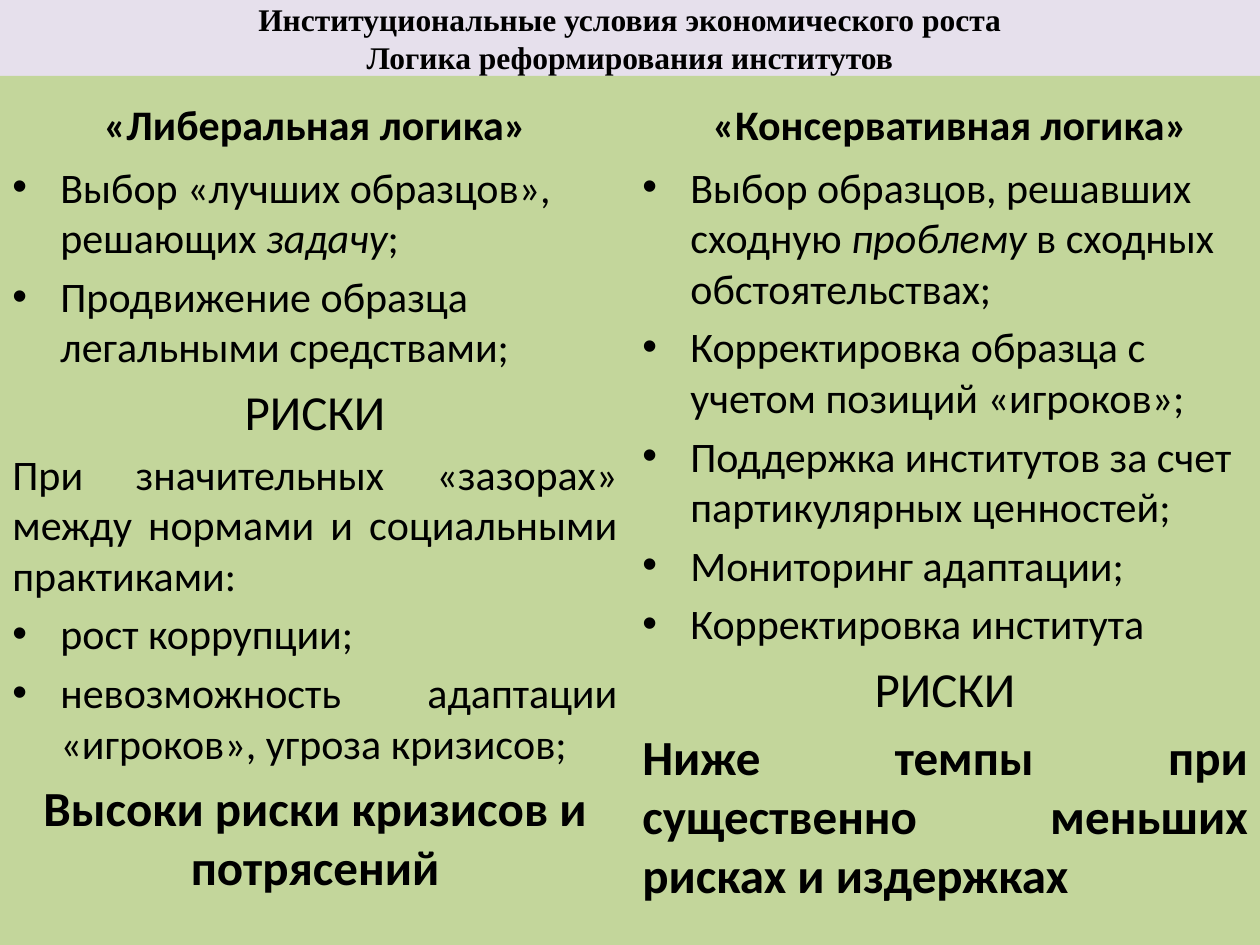
from lxml.etree import SubElement
from pptx import Presentation
from pptx.dml.color import RGBColor
from pptx.enum.shapes import MSO_SHAPE
from pptx.enum.text import MSO_ANCHOR, PP_ALIGN
from pptx.oxml.ns import qn
from pptx.util import Emu, Pt

SCALE = 914400 / 126
WIDTH, HEIGHT = 1260, 945
TITLE_BOTTOM, HEADING_BOTTOM = 76, 155
INDENT = 48
COLORS = {"title": "E6E0EC", "panel": "C3D69B", "text": "000000"}
LEFT, CENTER, JUSTIFY = PP_ALIGN.LEFT, PP_ALIGN.CENTER, PP_ALIGN.JUSTIFY

LIBERAL = [
    (LEFT, True, 24, [("Выбор «лучших образцов», решающих ", ""), ("задачу", "i"), (";", "")]),
    (LEFT, True, 24, [("Продвижение образца легальными средствами;", "")]),
    (CENTER, False, 28, [("РИСКИ", "")]),
    (JUSTIFY, False, 24, [("При значительных «зазорах» между нормами и социальными практиками:", "")]),
    (JUSTIFY, True, 24, [("рост коррупции;", "")]),
    (JUSTIFY, True, 24, [("невозможность адаптации «игроков», угроза кризисов;", "")]),
    (CENTER, False, 28, [("Высоки", "b"), (" ", ""), ("риски кризисов и потрясений", "b")]),
]
CONSERVATIVE = [
    (LEFT, True, 24, [("Выбор образцов, решавших сходную ", ""), ("проблему ", "i"),
                      ("в сходных обстоятельствах;", "")]),
    (LEFT, True, 24, [("Корректировка образца с учетом позиций «игроков»;", "")]),
    (LEFT, True, 24, [("Поддержка институтов за счет партикулярных ценностей;", "")]),
    (LEFT, True, 24, [("Мониторинг адаптации;", "")]),
    (LEFT, True, 24, [("Корректировка института", "")]),
    (CENTER, False, 28, [("РИСКИ", "")]),
    (JUSTIFY, False, 28, [("Ниже темпы при существенно меньших рисках и издержках", "b")]),
]


def px(length):
    """Turn pixels into EMU."""
    return Emu(round(length * SCALE))


def add_panel(slide, box, color, anchor):
    """Add a filled rectangle and return its text frame."""
    shape = slide.shapes.add_shape(MSO_SHAPE.RECTANGLE, *map(px, box))
    shape.shadow.inherit = False
    shape.fill.solid()
    shape.fill.fore_color.rgb = RGBColor.from_string(COLORS[color])
    shape.line.fill.background()
    frame = shape.text_frame
    frame.word_wrap = True
    frame.vertical_anchor = anchor
    return frame


def add_run(paragraph, text, size, style="", font="Calibri"):
    """Add one formatted run."""
    run = paragraph.add_run()
    run.text = text
    run.font.name = font
    run.font.size = Pt(size)
    run.font.bold = style == "b"
    run.font.italic = style == "i"
    run.font.color.rgb = RGBColor.from_string(COLORS["text"])


def set_bullet(paragraph):
    """Give a paragraph a hanging bullet."""
    properties = paragraph._p.get_or_add_pPr()
    properties.set("marL", str(px(INDENT)))
    properties.set("indent", str(-px(INDENT)))
    SubElement(properties, qn("a:buFont"), typeface="Arial")
    SubElement(properties, qn("a:buChar"), char="•")


def fill_frame(frame, items):
    """Write the paragraphs of a panel."""
    for index, (alignment, bulleted, size, runs) in enumerate(items):
        paragraph = frame.add_paragraph() if index else frame.paragraphs[0]
        paragraph.alignment = alignment
        paragraph.space_before = Pt(size * 0.2)
        if bulleted:
            set_bullet(paragraph)
        for text, style in runs:
            add_run(paragraph, text, size, style)


def add_title(slide, box, lines):
    """Add the title band."""
    paragraph = add_panel(slide, box, "title", MSO_ANCHOR.MIDDLE).paragraphs[0]
    paragraph.alignment = CENTER
    for index, line in enumerate(lines):
        if index:
            paragraph.add_line_break()
        add_run(paragraph, line, 18, "b", "Times New Roman")


def add_column(slide, heading_box, body_box, heading, items):
    """Add a heading panel and the body panel below it."""
    heading_frame = add_panel(slide, heading_box, "panel", MSO_ANCHOR.BOTTOM)
    fill_frame(heading_frame, [(CENTER, False, 24, [(heading, "b")])])
    fill_frame(add_panel(slide, body_box, "panel", MSO_ANCHOR.TOP), items)


def main():
    """Build and save the slide."""
    presentation = Presentation()
    presentation.slide_width, presentation.slide_height = px(WIDTH), px(HEIGHT)
    slide = presentation.slides.add_slide(presentation.slide_layouts[6])
    add_title(slide, (0, 0, WIDTH, TITLE_BOTTOM),
              ["Институциональные условия экономического роста", "Логика реформирования институтов"])
    split, half = 640, WIDTH // 2
    heading_height, body_height = HEADING_BOTTOM - TITLE_BOTTOM, HEIGHT - HEADING_BOTTOM
    columns = [
        (0, split, 0, "«Либеральная логика» ", LIBERAL),
        (split, WIDTH - split, half, "«Консервативная логика»", CONSERVATIVE),
    ]
    for heading_left, heading_width, body_left, heading, items in columns:
        add_column(slide, (heading_left, TITLE_BOTTOM, heading_width, heading_height),
                   (body_left, HEADING_BOTTOM, half, body_height), heading, items)
    presentation.save("out.pptx")


if __name__ == "__main__":
    main()
